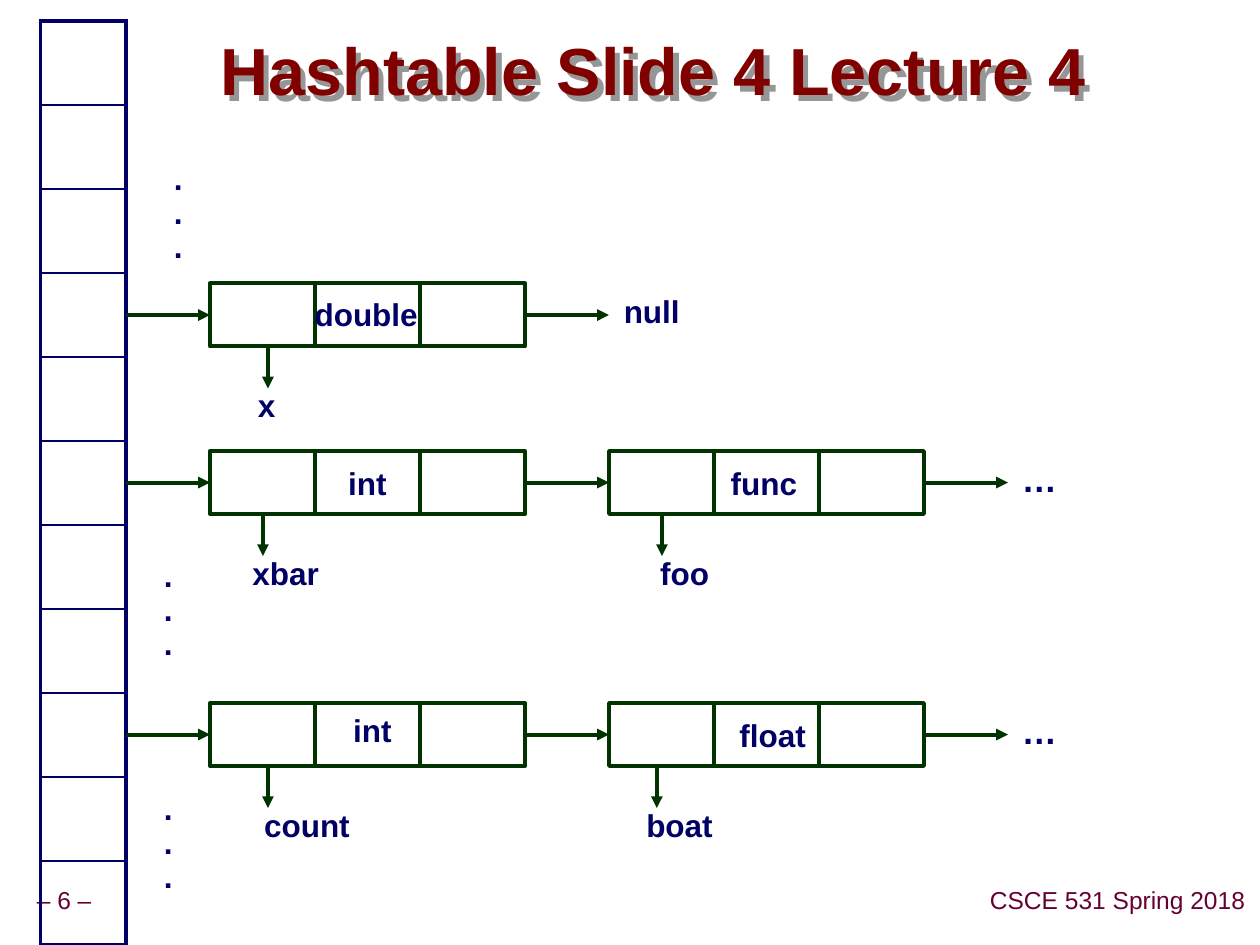
from collections import namedtuple

from lxml.etree import SubElement
from pptx import Presentation
from pptx.dml.color import RGBColor
from pptx.enum.shapes import MSO_CONNECTOR, MSO_SHAPE
from pptx.enum.text import MSO_ANCHOR, MSO_AUTO_SIZE, PP_ALIGN
from pptx.oxml import parse_xml
from pptx.oxml.ns import nsdecls, qn
from pptx.util import Inches, Pt

NAVY = RGBColor(0x00, 0x00, 0x66)
GREEN = RGBColor(0x00, 0x33, 0x00)
MAROON = RGBColor(0x80, 0x00, 0x00)
PLUM = RGBColor(0x66, 0x00, 0x33)
GREY = RGBColor(0x96, 0x96, 0x96)

# Sizes in inches
ROW_HEIGHT = 2 / 3
BUCKETS = 11
FIELD_WIDTH, NODE_HEIGHT = 5 / 6, 0.5
NODE_WIDTH = 3 * FIELD_WIDTH
LINK = 2 / 3
TABLE_RIGHT = 1

# Label centres and pointer positions are measured from the left of the node
Label = namedtuple("Label", "text center top width")
Node = namedtuple("Node", "kind name pointer")

CHAINS = [
    (2.25, [Node(Label("double", 1.24, 0.08, 0.96), Label("x", 0.45, 0.8, 0.26), 0.46)],
     Label("null", 0.34, 0.05, 0.57), 18),
    (3.58, [Node(Label("int", 1.25, 0.09, 0.43), Label("xbar", 0.6, 0.8, 0.66), 0.42),
            Node(Label("func", 1.23, 0.09, 0.66), Label("foo", 0.6, 0.8, 0.52), 0.42)],
     Label("…", 0.25, 0.04, 0.4), 20),
    (5.58, [Node(Label("int", 1.29, 0.05, 0.43), Label("count", 0.77, 0.8, 0.84), 0.46),
            Node(Label("float", 1.3, 0.09, 0.66), Label("boat", 0.56, 0.8, 0.66), 0.38)],
     Label("…", 0.25, 0.04, 0.4), 20),
]


def add_text(slide, text, left, top, width, height, size=18, color=NAVY, bold=True,
             align=PP_ALIGN.CENTER, anchor=MSO_ANCHOR.TOP, margin=0.05,
             spacing=0.9, wrap=False):
    box = slide.shapes.add_textbox(Inches(left), Inches(top), Inches(width), Inches(height))
    frame = box.text_frame
    frame.word_wrap = wrap
    frame.auto_size = MSO_AUTO_SIZE.NONE if wrap else MSO_AUTO_SIZE.SHAPE_TO_FIT_TEXT
    frame.vertical_anchor = anchor
    frame.margin_left = frame.margin_right = Inches(margin)
    frame.margin_top = frame.margin_bottom = Inches(margin)
    frame.text = text
    for paragraph in frame.paragraphs:
        paragraph.alignment = align
        paragraph.line_spacing = spacing
        font = paragraph.runs[0].font
        font.name, font.size, font.bold = "Arial", Pt(size), bold
        font.color.rgb = color
    return box


def add_label(slide, label, left, top, size=18):
    add_text(slide, label.text, left + label.center - label.width / 2, top + label.top,
             label.width, 0.37, size=size)


def add_arrow(slide, x1, y1, x2, y2):
    arrow = slide.shapes.add_connector(
        MSO_CONNECTOR.STRAIGHT, Inches(x1), Inches(y1), Inches(x2), Inches(y2))
    arrow.line.color.rgb = GREEN
    arrow.line.width = Pt(2.25)
    SubElement(arrow.line._get_or_add_ln(), qn("a:tailEnd"), type="triangle")
    SubElement(arrow._element.spPr, qn("a:effectLst"))


def add_title(slide, text, left, top, width, height):
    box = add_text(slide, text, left, top, width, height, size=38, color=MAROON,
                   align=PP_ALIGN.LEFT, anchor=MSO_ANCHOR.MIDDLE, margin=0,
                   spacing=0.87, wrap=True)
    # An unfilled box casts its shadow from the letters
    box._element.spPr.append(parse_xml(
        f'<a:effectLst {nsdecls("a")}><a:outerShdw dist="{Inches(0.06)}" dir="2700000" '
        f'algn="ctr" rotWithShape="0"><a:srgbClr val="{GREY}"/></a:outerShdw></a:effectLst>'))


def add_footer(slide, top):
    for text, left, width in (("– 6 –", 0.18, 0.66), ("CSCE 531 Spring 2018", 7.8, 2.14)):
        add_text(slide, text, left, top, width, 0.31, size=14, color=PLUM, bold=False,
                 anchor=MSO_ANCHOR.MIDDLE)


def set_border(cell, side, width):
    properties = cell._tc.get_or_add_tcPr()
    line = SubElement(properties, qn(f"a:ln{side}"), w=str(Pt(width)))
    fill = SubElement(line, qn("a:solidFill"))
    SubElement(fill, qn("a:srgbClr"), val=str(NAVY))


def add_buckets(slide, left, top, width):
    frame = slide.shapes.add_table(BUCKETS, 1, Inches(left), Inches(top),
                                   Inches(width), Inches(BUCKETS * ROW_HEIGHT))
    table = frame.table
    table.first_row = table.horz_banding = False
    for index, row in enumerate(table.rows):
        row.height = Inches(ROW_HEIGHT)
        cell = row.cells[0]
        set_border(cell, "L", 2.25)
        set_border(cell, "R", 2.25)
        set_border(cell, "T", 2.25 if index == 0 else 1)
        set_border(cell, "B", 2.25 if index == BUCKETS - 1 else 1)
        cell.fill.background()


def add_node(slide, node, left, top):
    for index in range(3):
        field = slide.shapes.add_shape(
            MSO_SHAPE.RECTANGLE, Inches(left + index * FIELD_WIDTH), Inches(top),
            Inches(FIELD_WIDTH), Inches(NODE_HEIGHT))
        field.shadow.inherit = False
        field.fill.background()
        field.line.color.rgb = GREEN
        field.line.width = Pt(2.25)
    # Pointer down to the symbol name
    bottom = top + NODE_HEIGHT
    add_arrow(slide, left + node.pointer, bottom, left + node.pointer, bottom + LINK / 2)
    add_label(slide, node.kind, left, top)
    add_label(slide, node.name, left, top)


def add_chain(slide, left, top, nodes, end, end_size):
    middle = top + NODE_HEIGHT / 2
    for node in nodes:
        add_arrow(slide, left, middle, left + LINK, middle)
        add_node(slide, node, left + LINK, top)
        left += LINK + NODE_WIDTH
    add_arrow(slide, left, middle, left + LINK, middle)
    add_label(slide, end, left + LINK, top, size=end_size)


def main():
    presentation = Presentation()
    presentation.slide_width, presentation.slide_height = Inches(10), Inches(7.5)
    slide = presentation.slides.add_slide(presentation.slide_layouts[6])

    add_footer(slide, 7)
    add_title(slide, "Hashtable Slide 4 Lecture 4", 1.75, 0.17, 7.23, 0.85)
    add_buckets(slide, 0.32, 1 / 6, TABLE_RIGHT - 0.32)
    for top, nodes, end, end_size in CHAINS:
        add_chain(slide, TABLE_RIGHT, top, nodes, end, end_size)

    # Vertical dots for the omitted buckets
    for left, top in ((1.33, 1.25), (1.25, 4.4), (1.25, 6.25)):
        add_text(slide, ".\n.\n.", left, top, 0.17, 0.91)

    presentation.save("out.pptx")


if __name__ == "__main__":
    main()
